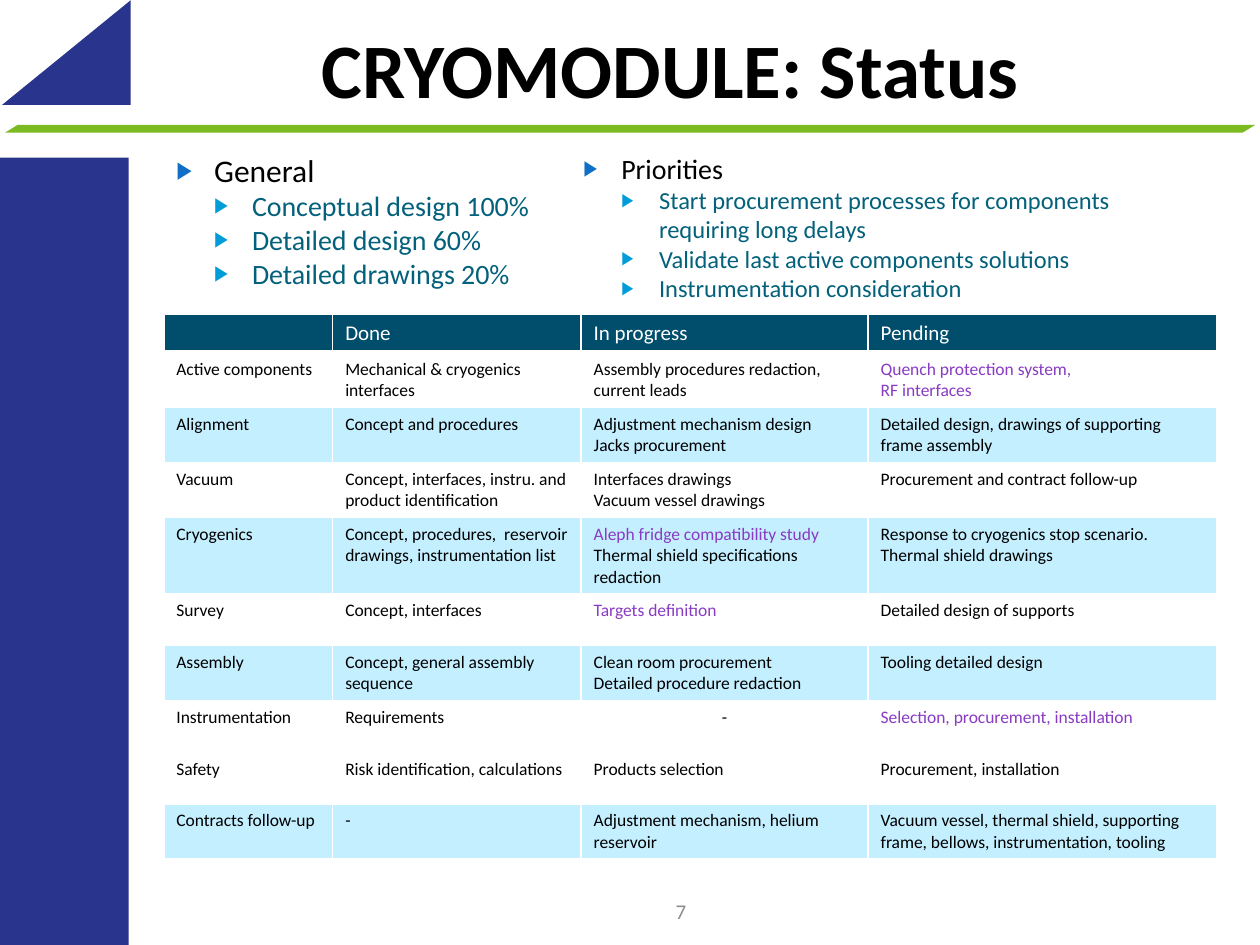
from lxml import etree
from pptx import Presentation
from pptx.dml.color import RGBColor
from pptx.enum import shapes, text
from pptx.oxml import ns
from pptx.util import Pt

NAVY = RGBColor(0x29, 0x34, 0x8C)
GREEN = RGBColor(0x7B, 0xBA, 0x21)
BLACK = RGBColor(0, 0, 0)
WHITE = RGBColor(0xFF, 0xFF, 0xFF)
GREY = RGBColor(0x8C, 0x8C, 0x8C)
PURPLE = RGBColor(0x89, 0x3B, 0xC3)
HEADER_TEAL = RGBColor(0x00, 0x4E, 0x6C)
PALE_BLUE = RGBColor(0xC4, 0xEF, 0xFF)
ITEM_TEAL = RGBColor(0x04, 0x61, 0x7B)
BULLETS = [RGBColor(0x0F, 0x6F, 0xC6), RGBColor(0x00, 0x9D, 0xD9)]

CENTER = text.PP_ALIGN.CENTER
MIDDLE = text.MSO_ANCHOR.MIDDLE

COLUMNS = [96.5, 142, 164, 199]
HEADINGS = ["", "Done", "In progress", "Pending"]
# Row height, fill, and the four cell texts
ROWS = [
    (31, WHITE, ["Active components", "Mechanical & cryogenics interfaces",
                 "Assembly procedures redaction, current leads",
                 "Quench protection system,\nRF interfaces"]),
    (31, PALE_BLUE, ["Alignment", "Concept and procedures",
                     "Adjustment mechanism design\nJacks procurement",
                     "Detailed design, drawings of supporting frame assembly"]),
    (31, WHITE, ["Vacuum", "Concept, interfaces, instru. and product identification",
                 "Interfaces drawings\nVacuum vessel drawings",
                 "Procurement and contract follow-up"]),
    (43, PALE_BLUE, ["Cryogenics",
                     "Concept, procedures,  reservoir drawings, instrumentation list",
                     "Aleph fridge compatibility study\nThermal shield specifications redaction",
                     "Response to cryogenics stop scenario. Thermal shield drawings"]),
    (29.5, WHITE, ["Survey", "Concept, interfaces", "Targets definition",
                   "Detailed design of supports"]),
    (29.5, PALE_BLUE, ["Assembly", "Concept, general assembly sequence",
                       "Clean room procurement\nDetailed procedure redaction",
                       "Tooling detailed design"]),
    (29.5, WHITE, ["Instrumentation", "Requirements", "-",
                   "Selection, procurement, installation"]),
    (29.5, WHITE, ["Safety", "Risk identification, calculations", "Products selection",
                   "Procurement, installation"]),
    (29.5, PALE_BLUE, ["Contracts follow-up", "-", "Adjustment mechanism, helium reservoir",
                       "Vacuum vessel, thermal shield, supporting frame, bellows, "
                       "instrumentation, tooling"]),
]
HIGHLIGHTS = {"Quench protection system,", "RF interfaces", "Targets definition",
              "Aleph fridge compatibility study", "Selection, procurement, installation"}


class SlideBuilder:
    font_name = "Calibri"

    def __init__(self, slide):
        self.slide = slide

    def style(self, para, size, color, **extra):
        formats = {"name": self.font_name, "size": Pt(size), "bold": False, **extra}
        for key, value in formats.items():
            setattr(para.font, key, value)
        para.font.color.rgb = color

    def place(self, box, left, top, width, height):
        for key, value in zip(("left", "top", "width", "height"), (left, top, width, height)):
            setattr(box, key, Pt(value))

    def shape(self, kind, area, color, rotation=0):
        shape = self.slide.shapes.add_shape(kind, *map(Pt, area))
        shape.shadow.inherit = False
        shape.fill.solid()
        shape.fill.fore_color.rgb = color
        shape.line.fill.background()
        shape.rotation = rotation
        return shape

    def line_of_text(self, box, words, size, color, **extra):
        frame = box.text_frame
        frame.text = words
        settings = {"word_wrap": True, "vertical_anchor": MIDDLE,
                    "auto_size": text.MSO_AUTO_SIZE.NONE}
        for key, value in settings.items():
            setattr(frame, key, value)
        frame.paragraphs[0].alignment = CENTER
        self.style(frame.paragraphs[0], size, color, **extra)

    def title(self, words, area):
        box = self.slide.shapes.title
        self.place(box, *area)
        self.line_of_text(box, words, 44, BLACK, bold=True)

    def page_number(self, words, area):
        box = self.slide.shapes.add_textbox(*map(Pt, area))
        self.line_of_text(box, words, 12, GREY)

    def bullet(self, para, level):
        props = para._p.get_or_add_pPr()
        props.set("marL", str(Pt(21.6 * (level + 1))))
        props.set("indent", str(Pt(-21.6)))
        color = etree.SubElement(props, ns.qn("a:buClr"))
        etree.SubElement(color, ns.qn("a:srgbClr"), val=str(BULLETS[level]))
        etree.SubElement(props, ns.qn("a:buSzPct"), val="76000")
        etree.SubElement(props, ns.qn("a:buChar"), char="▶")

    def bullet_list(self, index, area, heading, items, size):
        box = self.slide.placeholders[index]
        self.place(box, *area)
        frame = box.text_frame
        frame.text = "\n".join([heading, *items])
        frame.auto_size = text.MSO_AUTO_SIZE.NONE
        for number, para in enumerate(frame.paragraphs):
            level = min(number, 1)
            para.level = level
            para.space_before = Pt(0)
            self.bullet(para, level)
            self.style(para, size - 2 * level, ITEM_TEAL if level else BLACK)

    def borders(self, cell, bottom):
        props = cell._tc.get_or_add_tcPr()
        widths = {"lnL": 1, "lnR": 1, "lnT": 1, "lnB": bottom}
        for number, (side, width) in enumerate(widths.items()):
            line = etree.Element(ns.qn("a:" + side), w=str(Pt(width)))
            fill = etree.SubElement(line, ns.qn("a:solidFill"))
            etree.SubElement(fill, ns.qn("a:srgbClr"), val=str(WHITE))
            props.insert(number, line)

    def cell(self, cell, words, fill, size, color, bottom=1):
        cell.fill.solid()
        cell.fill.fore_color.rgb = fill
        self.borders(cell, bottom)
        cell.text_frame.text = words
        for para in cell.text_frame.paragraphs:
            self.style(para, size, PURPLE if para.text in HIGHLIGHTS else color)

    def status_table(self, left, top):
        heights = [21] + [height for height, _, _ in ROWS]
        frame = self.slide.shapes.add_table(len(heights), len(COLUMNS), Pt(left), Pt(top),
                                            Pt(sum(COLUMNS)), Pt(sum(heights)))
        table = frame.table
        for column, width in zip(table.columns, COLUMNS):
            column.width = Pt(width)
        for row, height in zip(table.rows, heights):
            row.height = Pt(height)
        for column, words in enumerate(HEADINGS):
            self.cell(table.cell(0, column), words, HEADER_TEAL, 12, WHITE, bottom=3)
        for row, (_, fill, texts) in enumerate(ROWS, 1):
            for column, words in enumerate(texts):
                self.cell(table.cell(row, column), words, fill, 10, BLACK)
                if words == "-" and column == 2:
                    table.cell(row, column).text_frame.paragraphs[0].alignment = CENTER


def main():
    deck = Presentation()
    deck.slide_width, deck.slide_height = Pt(720), Pt(540)
    page = SlideBuilder(deck.slides.add_slide(deck.slide_layouts[3]))

    # Frame decoration
    kinds = shapes.MSO_SHAPE
    page.shape(kinds.RECTANGLE, (0, 90, 73.5, 450), NAVY)
    page.shape(kinds.RIGHT_TRIANGLE, (8, -6.7, 59.8, 73.5), NAVY, rotation=270)
    rule = page.shape(kinds.PARALLELOGRAM, (2.9, 71.4, 714.3, 4.4), GREEN)
    rule.adjustments[0] = 1.625

    # Title and lists
    page.title("CRYOMODULE: Status", (82, 0, 602, 77))
    page.bullet_list(1, (93.6, 82.8, 221, 96.5), "General",
                     ["Conceptual design 100%", "Detailed design 60%",
                      "Detailed drawings 20%"], 18)
    page.bullet_list(2, (326.2, 82.8, 368.6, 102.2), "Priorities",
                     ["Start procurement processes for components requiring long delays",
                      "Validate last active components solutions",
                      "Instrumentation consideration"], 16)

    # Status table and page number
    page.status_table(93.6, 179.5)
    page.page_number("7", (305.3, 506.2, 167.8, 28.8))
    deck.save("out.pptx")


if __name__ == "__main__":
    main()
